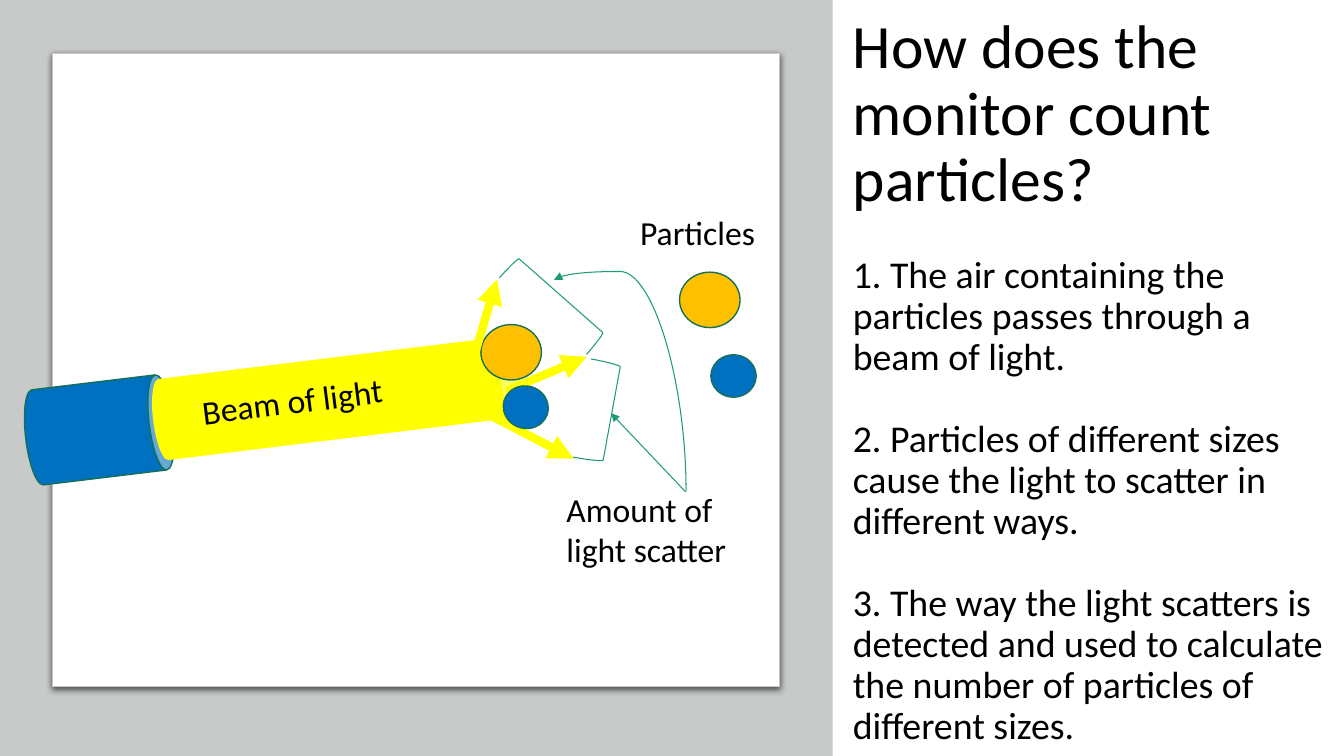
import pptx
import pptx.dml.color
import pptx.enum.shapes
import pptx.enum.text
import pptx.oxml
import pptx.oxml.ns
import pptx.util
from lxml import etree

Inches = pptx.util.Inches
Pt = pptx.util.Pt
qn = pptx.oxml.ns.qn
Shape = pptx.enum.shapes.MSO_SHAPE
Connector = pptx.enum.shapes.MSO_CONNECTOR

colours = {
    "text": "000000",
    "grey": "C8CACA",
    "white": "FFFFFF",
    "blue": "0070C0",
    "beam": "FFFF00",
    "orange": "FFC000",
    "outline": "157057",
    "callout": "1D9A78",
}

deck = pptx.Presentation()
deck.slide_width = Inches(13.33)
deck.slide_height = Inches(7.5)
page = deck.slides.add_slide(deck.slide_layouts[6])


def draw(kind, place, fill=None, line=None, width=1, turn=0, adjust=None):
    shape = page.shapes.add_shape(kind, *map(Inches, place))
    shape.shadow.inherit = False
    shape.rotation = turn
    if adjust is not None:
        shape.adjustments[0] = adjust
    for form, colour in ((shape.fill, fill), (shape.line.fill, line)):
        if colour:
            form.solid()
            form.fore_color.rgb = pptx.dml.color.RGBColor.from_string(colours[colour])
        else:
            form.background()
    if line:
        shape.line.width = Pt(width)
    return shape


def connect(kind, start, end, colour, width):
    arrow = page.shapes.add_connector(kind, *map(Inches, start + end))
    arrow.line.color.rgb = pptx.dml.color.RGBColor.from_string(colours[colour])
    arrow.line.width = Pt(width)
    etree.SubElement(arrow.line._get_or_add_ln(), qn("a:tailEnd"), type="triangle")
    etree.SubElement(arrow.element.spPr, qn("a:effectLst"))
    return arrow


draw(Shape.RECTANGLE, (0, 0, 8.26, 7.5), "grey")
panel = draw(Shape.ROUNDED_RECTANGLE, (0.52, 0.53, 7.21, 6.28), "white", "grey", 0.75, adjust=0)
effects = panel.element.spPr.find(qn("a:effectLst"))
shadow = etree.SubElement(
    effects, qn("a:outerShdw"),
    blurRad=str(Pt(4.5)), dist=str(Pt(1.5)), dir="5400000", rotWithShape="0",
)
shade = etree.SubElement(shadow, qn("a:srgbClr"), val=colours["text"])
etree.SubElement(shade, qn("a:alpha"), val="63000")

draw(Shape.CAN, (0.51, 3.53, 0.95, 1.47), "blue", "outline", turn=83.1, adjust=0.25)
draw(Shape.CAN, (2.94, 2.11, 0.81, 3.68), "beam", turn=83, adjust=0.25)

large, small = (0.6, 0.55), (0.45, 0.42)
for corner, size, colour in (
    ((4.77, 3.22), large, "orange"),
    ((7.05, 3.52), small, "blue"),
    ((6.74, 2.7), large, "orange"),
):
    draw(Shape.OVAL, corner + size, colour, "outline")

for start, end in (
    ((4.7, 3.54), (4.93, 2.77)),
    ((5.02, 3.88), (5.82, 3.54)),
    ((4.82, 4.1), (5.69, 4.55)),
):
    connect(Connector.STRAIGHT, start, end, "beam", 6)

draw(Shape.OVAL, (4.99, 3.83) + small, "blue", "outline", turn=17.8)

for place, turn in (((5.34, 2.46, 0.27, 1.15), 311.4), ((5.77, 3.58, 0.3, 0.99), 10.4)):
    draw(Shape.RIGHT_BRACKET, place, None, "callout", 0.75, turn, 0.083)

connect(Connector.STRAIGHT, (6.8, 4.88), (6.06, 4.1), "callout", 0.75)
curve = connect(Connector.CURVE, (7.2, 3.17), (5.1, 4.48), "callout", 0.75)
curve.element.spPr.find(qn("a:xfrm")).set("rot", "5400000")
geometry = curve.element.spPr.find(qn("a:prstGeom"))
guides = geometry.find(qn("a:avLst"))
if guides is None:
    guides = etree.SubElement(geometry, qn("a:avLst"))
etree.SubElement(guides, qn("a:gd"), name="adj1", fmla="val 103900")

explanation = (
    ("How does the monitor count particles?", 44),
    ("1. The air containing the particles passes through a beam of light.", 27),
    ("2. Particles of different sizes cause the light to scatter in different ways.", 27),
    ("3. The way the light scatters is detected and used to calculate "
     "the number of particles of different sizes.", 27),
)
middle = pptx.enum.text.MSO_ANCHOR.MIDDLE
top = pptx.enum.text.MSO_ANCHOR.TOP
tight = {"line_spacing": 0.9, "space_before": Pt(29.5)}
for place, turn, anchor, spacing, paragraphs in (
    ((8.36, 0.07, 4.89, 7.43), 0, middle, tight, explanation),
    ((1.9, 3.71, 2.22, 0.5), 352.8, top, {}, (("Beam of light", 24),)),
    ((6.25, 2.05, 1.63, 0.5), 0, top, {}, (("Particles", 24),)),
    ((5.52, 4.8, 2.07, 0.91), 0, top, {}, (("Amount of light scatter", 24),)),
):
    box = page.shapes.add_textbox(*map(Inches, place))
    box.rotation = turn
    frame = box.text_frame
    frame.word_wrap = True
    frame.vertical_anchor = anchor
    for index, (text, size) in enumerate(paragraphs):
        para = frame.add_paragraph() if index else frame.paragraphs[0]
        for name, value in spacing.items():
            if index or name != "space_before":
                setattr(para, name, value)
        span = para.add_run()
        span.text = text
        for name, value in {"name": "Calibri", "size": Pt(size)}.items():
            setattr(span.font, name, value)
        span.font.color.rgb = pptx.dml.color.RGBColor.from_string(colours["text"])

deck.save("out.pptx")
